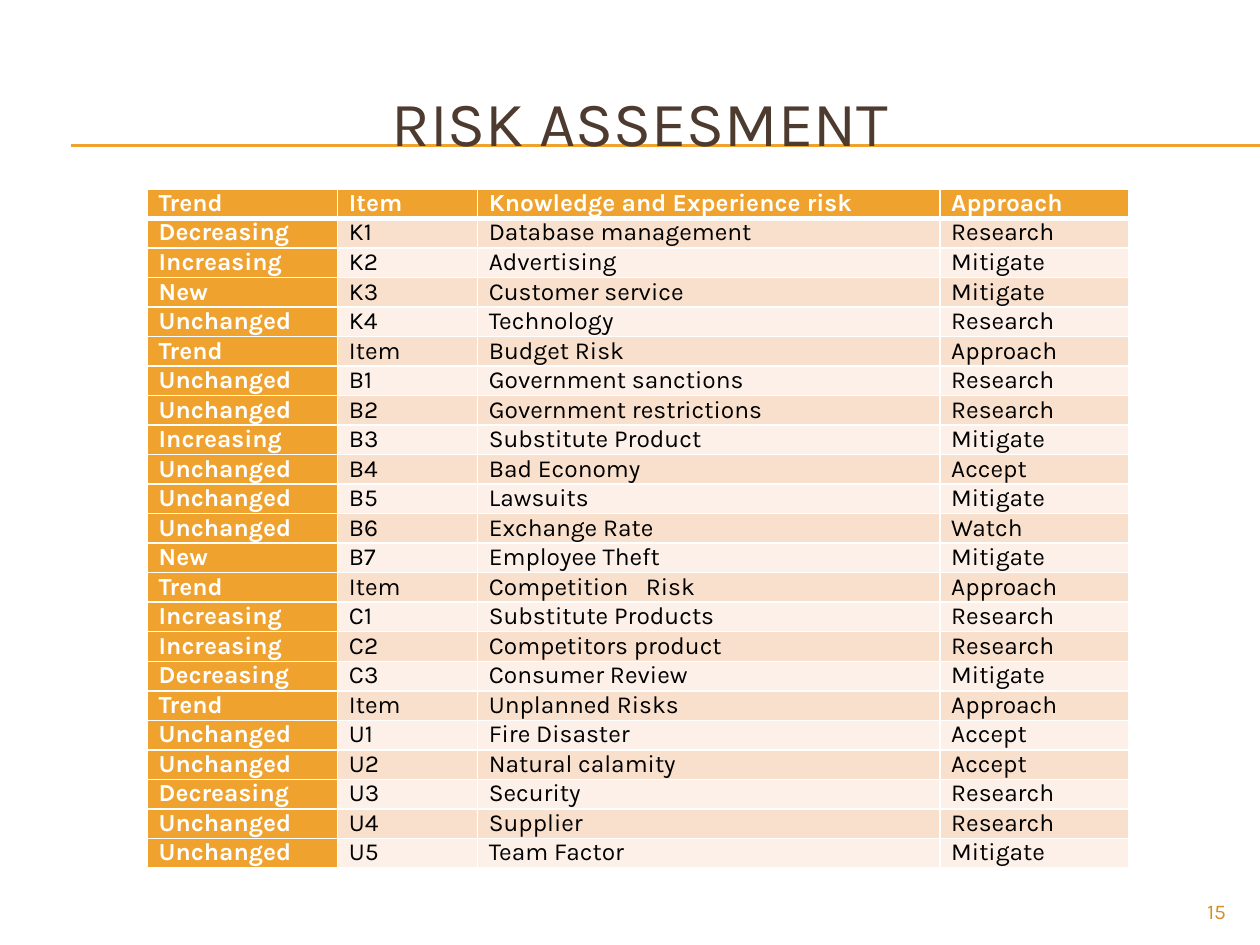
from lxml.etree import SubElement
from pptx import Presentation
from pptx.dml.color import RGBColor
from pptx.enum.shapes import MSO_CONNECTOR as Connector
from pptx.enum.text import MSO_ANCHOR as Anchor, PP_ALIGN as Align
from pptx.oxml.ns import qn
from pptx.util import Inches, Pt

FONT = "Karla"
ORANGE, WHITE, BLACK = "F0A22E", "FFFFFF", "000000"
BANDS = ("FCF0E8", "F9E0CD")
COLUMN_WIDTHS = (1.51, 1.11, 3.67, 1.5)
RISKS = [
    ("Trend", "Item", "Knowledge and Experience risk", "Approach"),
    ("Decreasing", "K1", "Database management", "Research"),
    ("Increasing", "K2", "Advertising", "Mitigate"),
    ("New", "K3", "Customer service", "Mitigate"),
    ("Unchanged", "K4", "Technology", "Research"),
    ("Trend", "Item", "Budget Risk", "Approach"),
    ("Unchanged", "B1", "Government sanctions", "Research"),
    ("Unchanged", "B2", "Government restrictions", "Research"),
    ("Increasing", "B3", "Substitute Product", "Mitigate"),
    ("Unchanged", "B4", "Bad Economy", "Accept"),
    ("Unchanged", "B5", "Lawsuits", "Mitigate"),
    ("Unchanged", "B6", "Exchange Rate", "Watch"),
    ("New", "B7", "Employee Theft", "Mitigate"),
    ("Trend", "Item", "Competition   Risk", "Approach"),
    ("Increasing", "C1", "Substitute Products", "Research"),
    ("Increasing", "C2", "Competitors product", "Research"),
    ("Decreasing", "C3", "Consumer Review", "Mitigate"),
    ("Trend", "Item", "Unplanned Risks", "Approach"),
    ("Unchanged", "U1", "Fire Disaster", "Accept"),
    ("Unchanged", "U2", "Natural calamity", "Accept"),
    ("Decreasing", "U3", "Security", "Research"),
    ("Unchanged", "U4", "Supplier", "Research"),
    ("Unchanged", "U5", "Team Factor", "Mitigate"),
]
INDENTED = "Fire Disaster"


def color(value):
    return RGBColor.from_string(value)


def set_all(target, values):
    for name, value in values.items():
        setattr(target, name, value)


def write(frame, text, size, shade, bold=False, align=Align.LEFT):
    para = frame.paragraphs[0]
    para.alignment = align
    span = para.add_run()
    span.text = text
    set_all(span.font, {"name": FONT, "size": Pt(size), "bold": bold})
    span.font.color.rgb = color(shade)
    return para


def add_text(page, box, text, size, shade, align, anchor):
    frame = page.shapes.add_textbox(*map(Inches, box)).text_frame
    set_all(frame, {"word_wrap": True, "vertical_anchor": anchor})
    write(frame, text, size, shade, align=align)


def add_rule(page, box):
    """Draw the double rule along the top and bottom edges of the box."""
    left, top, width, height = box
    for y in (top, top + height):
        line = page.shapes.add_connector(
            Connector.STRAIGHT, Inches(left), Inches(y), Inches(left + width), Inches(y))
        line.line.color.rgb = color(ORANGE)
        line.line.width = Pt(0.75)
        SubElement(line._element.spPr, qn("a:effectLst"))


def add_borders(cell, bottom=1, top=1):
    properties = cell._tc.get_or_add_tcPr()
    for side, width in {"L": 1, "R": 1, "T": top, "B": bottom}.items():
        edge = SubElement(properties, qn(f"a:ln{side}"), w=str(Pt(width)))
        fill = SubElement(edge, qn("a:solidFill"))
        SubElement(fill, qn("a:srgbClr"), val=WHITE)


def fill_cell(cell, text, row, column):
    accent = row == 0 or column == 0
    set_all(cell, {"margin_left": Inches(0.09), "margin_right": Inches(0.09),
                   "margin_top": 0, "margin_bottom": 0})
    add_borders(cell, bottom=3 if row == 0 else 1, top=3 if row == 1 else 1)
    cell.fill.solid()
    cell.fill.fore_color.rgb = color(ORANGE if accent else BANDS[row % 2])
    para = write(cell.text_frame, text, 14, WHITE if accent else BLACK, accent)
    if text == INDENTED:
        set_all(para._p.get_or_add_pPr(), {"marL": 0, "indent": Inches(0.5)})


def add_risk_table(page, box):
    table = page.shapes.add_table(
        len(RISKS), len(COLUMN_WIDTHS), *map(Inches, box)).table
    set_all(table, {"first_row": False, "horz_banding": False})
    for column, width in zip(table.columns, COLUMN_WIDTHS):
        column.width = Inches(width)
    for row, values in enumerate(RISKS):
        table.rows[row].height = Inches(box[3] / len(RISKS))
        for column, text in enumerate(values):
            fill_cell(table.cell(row, column), text, row, column)


def main():
    deck = Presentation()
    set_all(deck, {"slide_width": Inches(10), "slide_height": Inches(7.5)})
    page = deck.slides.add_slide(deck.slide_layouts[6])

    # Heading over the double rule
    add_rule(page, (0.56, 1.15, 9.44, 0.01))
    add_text(page, (0.33, 0.5, 9.5, 0.92), "RISK ASSESMENT", 36, "4E3B30",
             Align.CENTER, Anchor.MIDDLE)

    # Page number
    add_text(page, (9, 7.08, 0.83, 0.27), "15", 12, "D48F29", Align.RIGHT, Anchor.TOP)

    # Risk register
    add_risk_table(page, (1.17, 1.5, 7.79, 5.39))

    deck.save("out.pptx")


if __name__ == "__main__":
    main()
